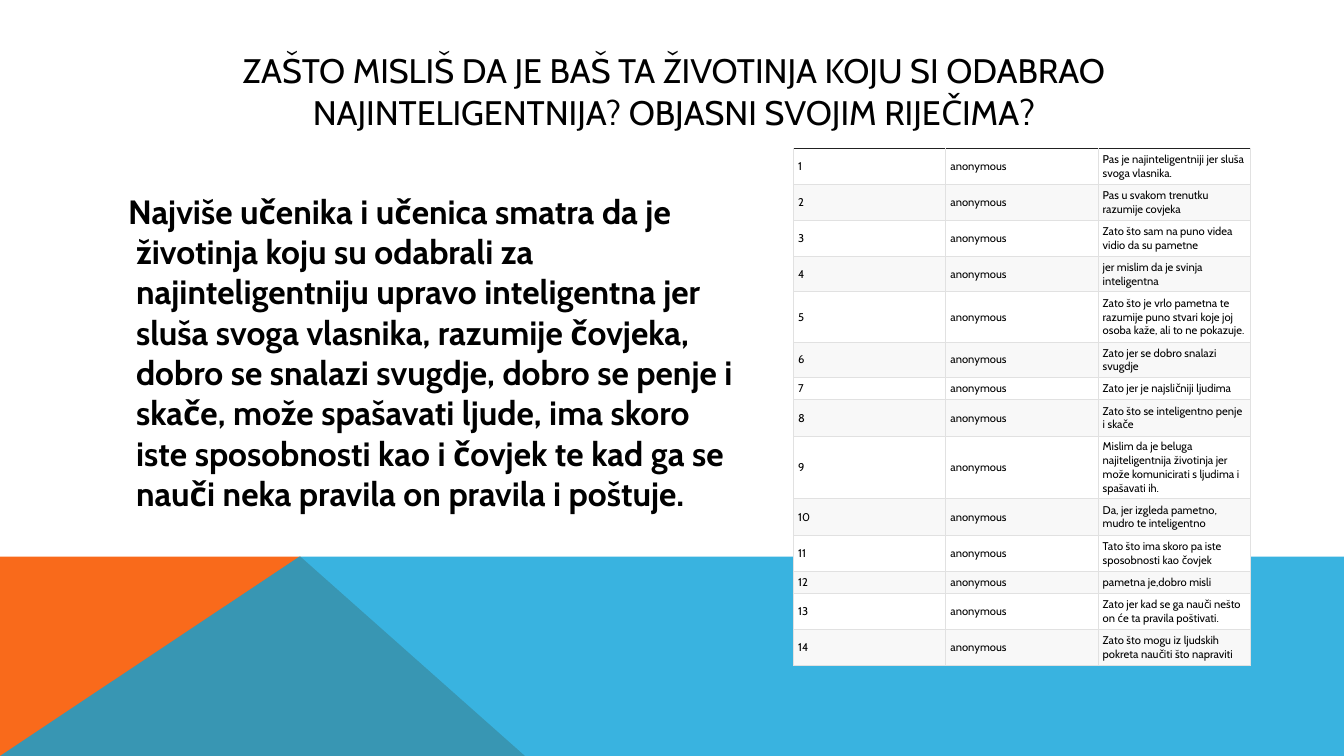
from dataclasses import dataclass

from lxml import etree
from pptx import Presentation
from pptx.dml.color import RGBColor
from pptx.enum.text import MSO_ANCHOR, MSO_AUTO_SIZE, PP_ALIGN
from pptx.oxml.ns import qn
from pptx.util import Pt

MIDDLE, TOP = MSO_ANCHOR.MIDDLE, MSO_ANCHOR.TOP
CENTER, LEFT = PP_ALIGN.CENTER, PP_ALIGN.LEFT
FIXED_SIZE = MSO_AUTO_SIZE.NONE


@dataclass(frozen=True)
class Theme:
    font: str = "Cabin"
    text: str = "000000"
    orange: str = "F96A1B"
    blue: str = "08A1D9"
    row_fills: tuple[str, str] = ("FFFFFF", "F8F8F8")
    grid: str = "E1E1E1"
    top_rule: str = "212121"
    title_size: float = 24.3
    question_mark_size: float = 25.2
    body_size: float = 24
    table_size: float = 8


@dataclass(frozen=True)
class Panel:
    points: list[tuple[float, float]]
    color: str
    opacity: int


@dataclass(frozen=True)
class Answer:
    text: str
    height: float


THEME = Theme()
WIDTH, HEIGHT, BAND_TOP = 960, 540, 397.5

PANELS = [
    Panel([(0, HEIGHT), (0, BAND_TOP), (214.5, BAND_TOP), (375, HEIGHT)],
          THEME.orange, 100),
    Panel([(0, HEIGHT), (214, BAND_TOP), (WIDTH, BAND_TOP), (WIDTH, HEIGHT)],
          THEME.blue, 80),
]

QUESTION = ("ZAŠTO MISLIŠ DA JE BAŠ TA ŽIVOTINJA KOJU SI ODABRAO "
            "NAJINTELIGENTNIJA? OBJASNI SVOJIM RIJEČIMA")
SUMMARY = ("Najviše učenika i učenica smatra da je životinja koju su odabrali za "
           "najinteligentniju upravo inteligentna jer sluša svoga vlasnika, razumije "
           "čovjeka, dobro se snalazi svugdje, dobro se penje i skače, može spašavati "
           "ljude, ima skoro iste sposobnosti kao i čovjek te kad ga se nauči neka "
           "pravila on pravila i poštuje.")
ANSWERS = [
    Answer("Pas je najinteligentniji jer sluša svoga vlasnika.", 25.2),
    Answer("Pas u svakom trenutku razumije covjeka", 25.8),
    Answer("Zato što sam na puno videa vidio da su pametne", 25.8),
    Answer("jer mislim da je svinja inteligentna", 25.2),
    Answer("Zato što je vrlo pametna te razumije puno stvari koje joj osoba kaže, "
           "ali to ne pokazuje.", 36),
    Answer("Zato jer se dobro snalazi svugdje", 25.2),
    Answer("Zato jer je najsličniji ljudima", 16),
    Answer("Zato što se inteligentno penje i skače", 25.8),
    Answer("Mislim da je beluga najiteligentnija životinja jer može komunicirati "
           "s ljudima i spašavati ih.", 44),
    Answer("Da, jer izgleda pametno, mudro te inteligentno", 25.8),
    Answer("Tato što ima skoro pa iste sposobnosti kao čovjek", 25.8),
    Answer("pametna je,dobro misli", 16),
    Answer("Zato jer kad se ga nauči nešto on će ta pravila poštivati.", 25.8),
    Answer("Zato što mogu iz ljudskih pokreta naučiti što napraviti", 25.8),
]


def style_font(font, size: float, bold: bool = False) -> None:
    font.name = THEME.font
    font.size = Pt(size)
    font.bold = bold
    font.color.rgb = RGBColor.from_string(THEME.text)


def place(placeholder, left: float, top: float, width: float, height: float) -> None:
    placeholder.left, placeholder.top = Pt(left), Pt(top)
    placeholder.width, placeholder.height = Pt(width), Pt(height)


def draw_panel(slide, panel: Panel) -> None:
    start, *others = [(Pt(x), Pt(y)) for x, y in panel.points]
    builder = slide.shapes.build_freeform(*start)
    builder.add_line_segments(others, close=True)
    shape = builder.convert_to_shape()
    shape.shadow.inherit = False
    shape.line.fill.background()
    shape.fill.solid()
    shape.fill.fore_color.rgb = RGBColor.from_string(panel.color)
    if panel.opacity < 100:
        color = shape.fill._xPr.find(".//" + qn("a:srgbClr"))
        etree.SubElement(color, qn("a:alpha"), val=str(panel.opacity * 1000))


def fill_title(title) -> None:
    place(title, 86.4, 28.8, 790, 72)
    frame = title.text_frame
    frame.auto_size, frame.vertical_anchor = FIXED_SIZE, MIDDLE
    paragraph = frame.paragraphs[0]
    paragraph.alignment = CENTER
    for text, size in ((QUESTION, THEME.title_size), ("?", THEME.question_mark_size)):
        run = paragraph.add_run()
        run.text = text
        style_font(run.font, size)


def fill_summary(body) -> None:
    place(body, 62.6, 132.5, 468.8, 240)
    frame = body.text_frame
    frame.auto_size, frame.vertical_anchor = FIXED_SIZE, TOP
    frame.text = SUMMARY
    paragraph = frame.paragraphs[0]
    paragraph.alignment = LEFT
    paragraph.space_before = Pt(8)
    style_font(paragraph.font, THEME.body_size, bold=True)
    properties = paragraph._p.get_or_add_pPr()
    properties.set("marL", str(Pt(27.4)))
    properties.set("indent", str(Pt(-5.7)))
    bullet = etree.Element(qn("a:buNone"))
    properties.find(qn("a:defRPr")).addprevious(bullet)


def border_cell(cell, top_color: str) -> None:
    properties = cell._tc.get_or_add_tcPr()
    sides = (("lnL", THEME.grid), ("lnR", THEME.grid),
             ("lnT", top_color), ("lnB", THEME.grid))
    for position, (side, color) in enumerate(sides):
        line = etree.Element(qn("a:" + side), w=str(Pt(0.75)))
        fill = etree.SubElement(line, qn("a:solidFill"))
        etree.SubElement(fill, qn("a:srgbClr"), val=color)
        properties.insert(position, line)


def fill_cell(cell, text: str, row: int) -> None:
    cell.text = text
    cell.vertical_anchor = MIDDLE
    cell.margin_left = cell.margin_right = Pt(3.3)
    cell.margin_top = cell.margin_bottom = Pt(2.8)
    cell.fill.solid()
    cell.fill.fore_color.rgb = RGBColor.from_string(THEME.row_fills[row % 2])
    style_font(cell.text_frame.paragraphs[0].font, THEME.table_size)
    border_cell(cell, THEME.grid if row else THEME.top_rule)


def draw_answers(slide, answers: list[Answer]) -> None:
    total = sum(answer.height for answer in answers)
    table = slide.shapes.add_table(len(answers), 3, Pt(566.8), Pt(106.3),
                                   Pt(326.4), Pt(total)).table
    table.first_row = table.horz_banding = False
    for row, answer in enumerate(answers):
        table.rows[row].height = Pt(answer.height)
        for column, text in enumerate((str(row + 1), "anonymous", answer.text)):
            fill_cell(table.cell(row, column), text, row)


def main() -> None:
    deck = Presentation()
    deck.slide_width, deck.slide_height = Pt(WIDTH), Pt(HEIGHT)
    slide = deck.slides.add_slide(deck.slide_layouts[1])

    # Coloured band along the bottom
    for panel in PANELS:
        draw_panel(slide, panel)

    # Question and summary
    fill_title(slide.shapes.title)
    fill_summary(slide.placeholders[1])

    # Pupils' answers
    draw_answers(slide, ANSWERS)

    deck.save("out.pptx")


if __name__ == "__main__":
    main()
